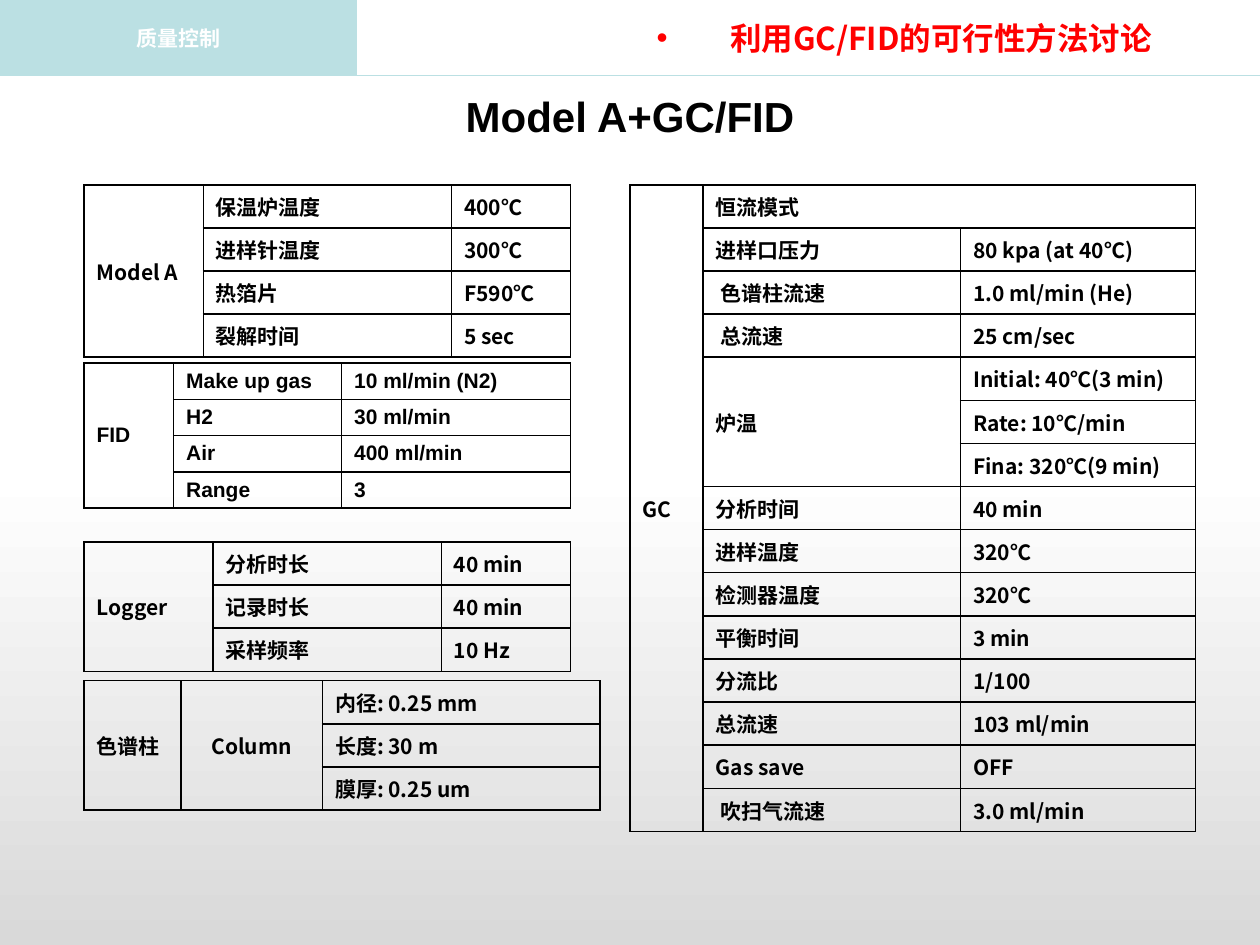
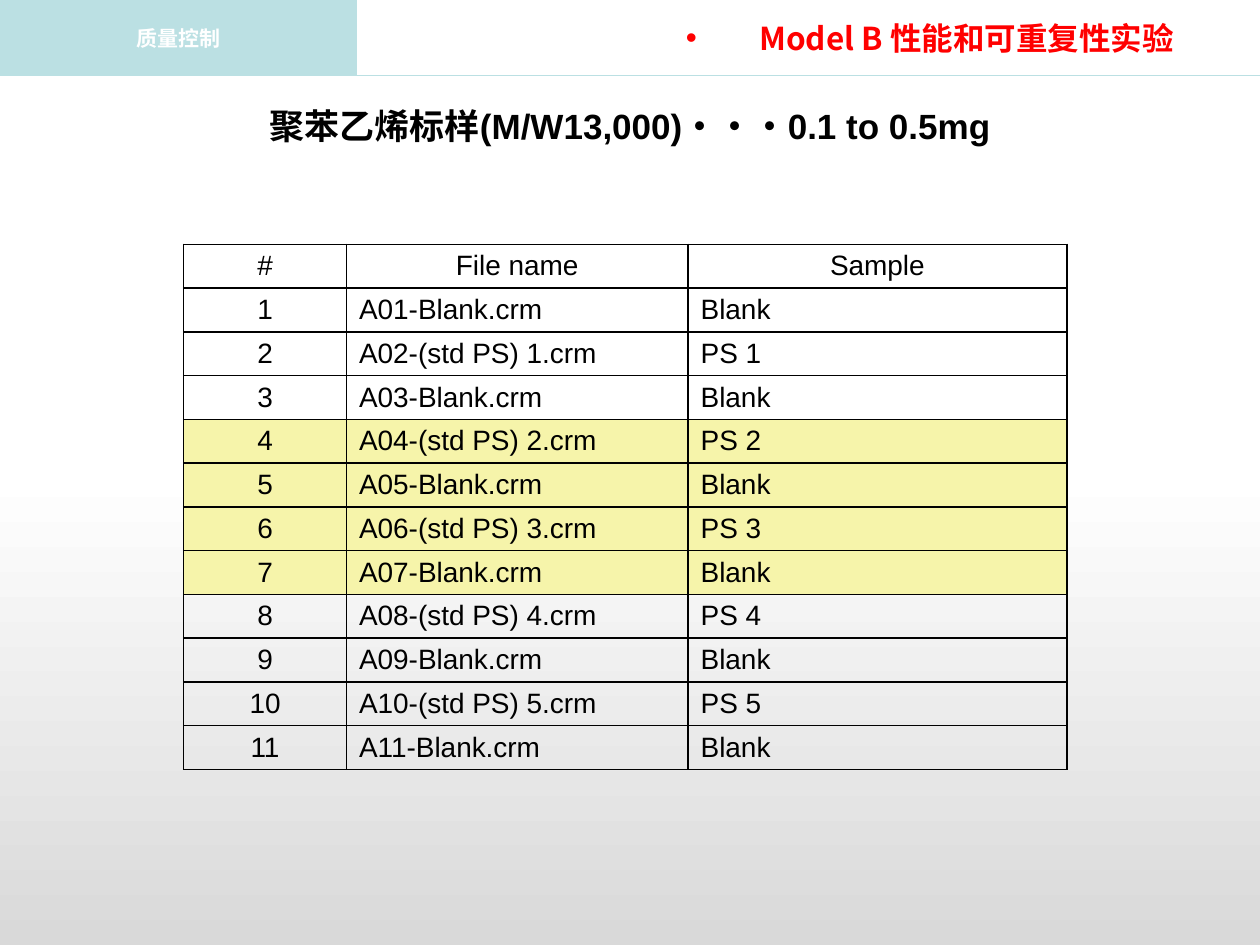
from lxml import etree
from pptx import Presentation
from pptx.dml.color import RGBColor
from pptx.enum.shapes import MSO_CONNECTOR, MSO_SHAPE
from pptx.enum.text import MSO_ANCHOR, MSO_AUTO_SIZE, PP_ALIGN
from pptx.oxml.ns import qn
from pptx.util import Pt

RECTANGLE, STRAIGHT = MSO_SHAPE.RECTANGLE, MSO_CONNECTOR.STRAIGHT
MIDDLE, NO_FIT = MSO_ANCHOR.MIDDLE, MSO_AUTO_SIZE.NONE
LEFT, CENTER = PP_ALIGN.LEFT, PP_ALIGN.CENTER

LATIN, CJK = "Arial", "Noto Sans CJK SC"
BLACK, WHITE, GREY = "000000", "FFFFFF", "D9D9D9"
TEAL, RED, YELLOW = "BBE0E3", "FF0000", "F6F4AA"
WIDTH, HEIGHT, BAND_HEIGHT = 720, 540, 43.2


def color(hex_string):
    return RGBColor.from_string(hex_string)


class Deck:
    def __init__(self):
        self.prs = Presentation()
        self.prs.slide_width, self.prs.slide_height = Pt(WIDTH), Pt(HEIGHT)
        self.slide = None

    def format_run(self, run, size, font, ink, bold=True):
        run.font.size, run.font.name, run.font.bold = Pt(size), font, bold
        run.font.color.rgb = color(ink)
        east_asian = etree.Element(qn("a:ea"), typeface=font)
        run.font._element.find(qn("a:latin")).addnext(east_asian)

    def place(self, shape, left, top, width, height):
        shape.left, shape.top = Pt(left), Pt(top)
        shape.width, shape.height = Pt(width), Pt(height)
        frame = shape.text_frame
        frame.word_wrap, frame.auto_size = True, NO_FIT
        frame.vertical_anchor = MIDDLE
        return frame

    def rectangle(self, width, height):
        """Add an unlined rectangle at the top left corner."""
        shape = self.slide.shapes.add_shape(RECTANGLE, 0, 0, Pt(width), Pt(height))
        shape.shadow.inherit = False
        shape.line.fill.background()
        return shape

    def backdrop(self):
        fill = self.rectangle(WIDTH, HEIGHT).fill
        fill.gradient()
        fill.gradient_angle = 90
        for stop, position, tint in zip(fill.gradient_stops, (0, 0.5), (GREY, WHITE)):
            stop.position = position
            stop.color.rgb = color(tint)

    def section_band(self, section):
        band = self.rectangle(204, BAND_HEIGHT)
        band.fill.solid()
        band.fill.fore_color.rgb = color(TEAL)
        band.text_frame.text = section
        band.text_frame.vertical_anchor = MIDDLE
        paragraph = band.text_frame.paragraphs[0]
        paragraph.alignment = CENTER
        self.format_run(paragraph.runs[0], 12, LATIN, WHITE)

    def band_rule(self):
        rule = self.slide.shapes.add_connector(
            STRAIGHT, 0, Pt(BAND_HEIGHT), Pt(WIDTH), Pt(BAND_HEIGHT))
        rule.line.color.rgb = color(TEAL)
        rule.line.width = Pt(0.75)
        etree.SubElement(rule._element.spPr, qn("a:effectLst"))

    def new_slide(self, section):
        self.slide = self.prs.slides.add_slide(self.prs.slide_layouts[1])
        self.backdrop()
        self.section_band(section)
        self.band_rule()
        for placeholder in list(self.slide.placeholders):
            # Text belongs in front of the backdrop.
            self.slide.shapes._spTree.append(placeholder._element)

    def topic(self, text, left):
        """Fill the body placeholder with the red bullet beside the band."""
        frame = self.place(self.slide.placeholders[1], left, 0, WIDTH - left, BAND_HEIGHT)
        frame.text = text
        paragraph = frame.paragraphs[0]
        paragraph.level = 1
        properties = paragraph._p.get_or_add_pPr()
        properties.set("marL", str(Pt(78)))
        properties.set("indent", str(Pt(-42)))
        etree.SubElement(properties, qn("a:buFont"), typeface=LATIN)
        etree.SubElement(properties, qn("a:buChar"), char="•")
        self.format_run(paragraph.runs[0], 18, CJK, RED)

    def title(self, parts, size, height, bottom_inset=3.6):
        """Fill the title placeholder with (text, font) parts."""
        frame = self.place(self.slide.shapes.title, 0, BAND_HEIGHT, WIDTH, height)
        frame.margin_bottom = Pt(bottom_inset)
        paragraph = frame.paragraphs[0]
        paragraph.alignment = CENTER
        for text, font in parts:
            run = paragraph.add_run()
            run.text = text
            self.format_run(run, size, font, BLACK)

    def cell_borders(self, cell):
        properties = cell._tc.get_or_add_tcPr()
        for index, side in enumerate(("lnL", "lnR", "lnT", "lnB")):
            border = etree.Element(qn(f"a:{side}"), w=str(Pt(1)))
            fill = etree.SubElement(border, qn("a:solidFill"))
            etree.SubElement(fill, qn("a:srgbClr"), val=BLACK)
            properties.insert(index, border)

    def merge_gaps(self, table, rows):
        """Merge every cell with the None entries below it and to its right."""
        for r, row in enumerate(rows):
            for c, text in enumerate(row):
                if text is None:
                    continue
                last_row, last_column = r, c
                while last_row + 1 < len(rows) and rows[last_row + 1][c] is None:
                    last_row += 1
                while last_column + 1 < len(row) and row[last_column + 1] is None:
                    last_column += 1
                if (last_row, last_column) != (r, c):
                    table.cell(r, c).merge(table.cell(last_row, last_column))

    def table(self, left, top, widths, row_height, rows, size=12, font=CJK, bold=True,
              centered=lambda r, c: False, highlighted=()):
        table = self.slide.shapes.add_table(
            len(rows), len(widths), Pt(left), Pt(top),
            Pt(sum(widths)), Pt(row_height * len(rows))).table
        table.first_row = table.horz_banding = False
        for column, width in zip(table.columns, widths):
            column.width = Pt(width)
        for r, row in enumerate(rows):
            table.rows[r].height = Pt(row_height)
            for c, text in enumerate(row):
                cell = table.cell(r, c)
                cell.vertical_anchor = MIDDLE
                if r in highlighted:
                    cell.fill.solid()
                    cell.fill.fore_color.rgb = color(YELLOW)
                else:
                    cell.fill.background()
                self.cell_borders(cell)
                if text is not None:
                    paragraph = cell.text_frame.paragraphs[0]
                    paragraph.text = text
                    paragraph.alignment = CENTER if centered(r, c) else LEFT
                    self.format_run(paragraph.runs[0], size, font, BLACK, bold)
        self.merge_gaps(table, rows)


PYROLYZER = [
    ("Model A", "保温炉温度", "400℃"),
    (None, "进样针温度", "300℃"),
    (None, "热箔片", "F590℃"),
    (None, "裂解时间", "5 sec"),
]
FID = [
    ("FID", "Make up gas", "10 ml/min (N2)"),
    (None, "H2", "30 ml/min"),
    (None, "Air", "400 ml/min"),
    (None, "Range", "3"),
]
DATA_SYSTEM = [
    ("Logger", "分析时长", "40 min"),
    (None, "记录时长", "40 min"),
    (None, "采样频率", "10 Hz"),
]
GC_COLUMN = [
    ("色谱柱", "Column", "内径: 0.25 mm"),
    (None, None, "长度: 30 m"),
    (None, None, "膜厚: 0.25 um"),
]
GC = [
    ("GC", "恒流模式", None),
    (None, "进样口压力", "80 kpa (at 40℃)"),
    (None, " 色谱柱流速", "1.0 ml/min (He)"),
    (None, " 总流速", "25 cm/sec"),
    (None, "炉温", "Initial: 40℃(3 min)"),
    (None, None, "Rate: 10℃/min"),
    (None, None, "Fina: 320℃(9 min)"),
    (None, "分析时间", "40 min"),
    (None, "进样温度", "320℃"),
    (None, "检测器温度", "320℃"),
    (None, "平衡时间", "3 min"),
    (None, "分流比", "1/100"),
    (None, "总流速", "103 ml/min"),
    (None, "Gas save", "OFF"),
    (None, " 吹扫气流速", "3.0 ml/min"),
]


def sample_rows():
    """Blanks on odd runs, numbered standards on even runs."""
    rows = [("#", "File name", "Sample")]
    for number in range(1, 12):
        standard = number // 2
        if number % 2:
            name, sample = "-Blank", "Blank"
        else:
            name, sample = f"-(std PS) {standard}", f"PS {standard}"
        rows.append((str(number), f"A{number:02}{name}.crm", sample))
    return rows


def main():
    deck = Deck()
    section = "质量控制"
    left, row_height = 48, 24.64

    deck.new_slide(section)
    deck.topic("利用GC/FID的可行性方法讨论", 332)
    deck.title([("Model A+GC/FID", LATIN)], 24, 45.4)
    deck.table(left, 105.6, (68.2, 141.8, 68), row_height, PYROLYZER)
    deck.table(left, 207.5, (51.2, 96, 130.8), 20.7, FID, font=LATIN)
    deck.table(left, 309.7, (73.8, 130.4, 73.8), row_height, DATA_SYSTEM)
    deck.table(left, 389, (55.5, 80.8, 158.7), row_height, GC_COLUMN,
               centered=lambda r, c: c == 1)
    deck.table(360, 105.6, (41.8, 147.2, 134.2), row_height, GC)

    deck.new_slide(section)
    deck.topic("Model B 性能和可重复性实验", 348.7)
    deck.title([("聚苯乙烯标样", CJK), ("(M/W13,000)・・・0.1 to 0.5mg", LATIN)],
               20, 79.2, bottom_inset=26)
    deck.table(104.9, 139.6, (93.1, 195.2, 216.4), 25, sample_rows(), size=16,
               font=LATIN, bold=False, centered=lambda r, c: r == 0 or c == 0,
               highlighted=range(4, 8))

    deck.prs.save("out.pptx")


if __name__ == "__main__":
    main()
